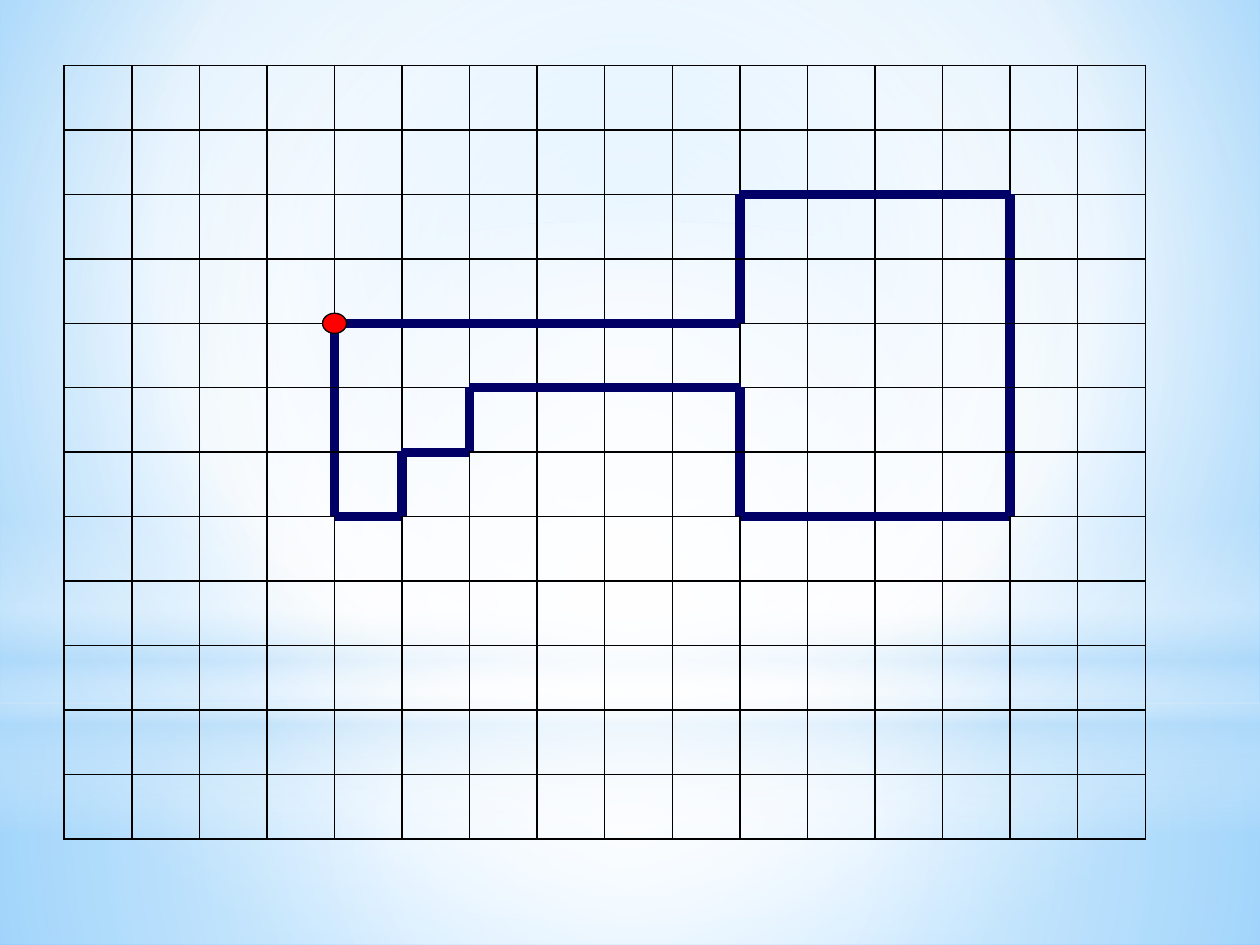
from itertools import pairwise, product
from lxml.etree import SubElement
from pptx import Presentation
from pptx.dml.color import RGBColor
from pptx.enum.shapes import MSO_SHAPE
from pptx.oxml.ns import qn
from pptx.util import Inches, Pt

THEME = {
    "font": "Calibri", "size": 18,
    "grid": ("000000", 1), "outline": ("000066", 6),
    "dot": "FF0000", "dot_line": ("000000", 0.75),
    "sky": [(0, "9ED5FF", 100), (60, "FFFFFF", 100), (100, "5BB9FF", 100)],
    "floor": [(0, "FFFFFF", 91), (37, "FFFFFF", 76), (100, "B4DCFA", 79)],
    "wall": [(0, "FFFFFF", 89), (48, "FFFFFF", 62), (100, "B4DCFA", 79)],
    "horizon": [(0, "FFFFFF", 0), (29, "FFFFFF", 30), (45, "B4DCFA", 40),
                (55, "FFFFFF", 26), (65, "B4DCFA", 60), (100, "FFFFFF", 0)],
    "glow": [(0, "FFFFFF", 100), (56, "FFFFFF", 0)],
}
W, H = 10, 7.5
COLS, ROWS = 16, 12
LEFT, TOP, GRID_W, GRID_H = 0.51, 0.52, 8.58, 6.14
DOT_W, DOT_H = 0.19, 0.16
CENTER = (50, 50, 50, 50)
BACKDROP = [
    ("floor", MSO_SHAPE.RECTANGLE, 5.58, 1.92, CENTER),
    ("wall", MSO_SHAPE.RECTANGLE, 0, 5.58, CENTER),
    ("horizon", MSO_SHAPE.RECTANGLE, 4.12, 2.5, None),
    ("glow", MSO_SHAPE.OVAL, 1.75, 5.58, CENTER),
]
KEY = [(4, 4), (10, 4), (10, 2), (14, 2), (14, 7), (10, 7), (10, 5),
       (6, 5), (6, 6), (5, 6), (5, 7), (4, 7), (4, 4)]


def add(parent, tag, **attrs):
    return SubElement(parent, qn(tag), {k: str(v) for k, v in attrs.items()})


def gradient(owner, fill, stops, focus):
    fill.solid()
    solid = owner.element.find(".//" + qn("a:solidFill"))
    grad = add(solid.getparent(), "a:gradFill", rotWithShape=1)
    solid.getparent().replace(solid, grad)
    gs_list = add(grad, "a:gsLst")
    for pos, color, alpha in stops:
        gs = add(gs_list, "a:gs", pos=pos * 1000)
        add(add(gs, "a:srgbClr", val=color), "a:alpha", val=alpha * 1000)
    if focus:
        sides = {k: v * 1000 for k, v in zip("ltrb", focus)}
        add(add(grad, "a:path", path="circle"), "a:fillToRect", **sides)
    else:
        add(grad, "a:lin", ang=5400000, scaled=0)


def add_shape(s, kind, x, y, w, h):
    sp = s.shapes.add_shape(kind, Inches(x), Inches(y), Inches(w), Inches(h))
    sp.shadow.inherit = False
    return sp


def outline_edges(points):
    edges = set()
    for (x1, y1), (x2, y2) in pairwise(points):
        if y1 == y2:
            edges |= {("h", x, y1) for x in range(min(x1, x2), max(x1, x2))}
        else:
            edges |= {("v", x1, y) for y in range(min(y1, y2), max(y1, y2))}
    return edges


def style_cell(cell, col, row, edges):
    r = cell.text_frame.paragraphs[0]
    r.font.name, r.font.size = THEME["font"], Pt(THEME["size"])
    tc_pr = cell._tc.get_or_add_tcPr()
    sides = {"a:lnL": ("v", col, row), "a:lnR": ("v", col + 1, row),
             "a:lnT": ("h", col, row), "a:lnB": ("h", col, row + 1)}
    for tag, edge in sides.items():
        color, width = THEME["outline" if edge in edges else "grid"]
        ln = add(tc_pr, tag, w=Pt(width), cap="flat", cmpd="sng")
        add(add(ln, "a:solidFill"), "a:srgbClr", val=color)
        add(ln, "a:prstDash", val="solid")
    cell.fill.background()


def add_grid(s):
    table = s.shapes.add_table(ROWS, COLS, Inches(LEFT), Inches(TOP),
                               Inches(GRID_W), Inches(GRID_H)).table
    table.first_row = table.horz_banding = False
    for column in table.columns:
        column.width = Inches(GRID_W / COLS)
    for row in table.rows:
        row.height = Inches(GRID_H / ROWS)
    edges = outline_edges(KEY)
    for row, col in product(range(ROWS), range(COLS)):
        style_cell(table.cell(row, col), col, row, edges)


def add_start(s):
    col, row = KEY[0]
    x = LEFT + col * GRID_W / COLS - DOT_W / 2
    y = TOP + row * GRID_H / ROWS - DOT_H / 2
    sp = add_shape(s, MSO_SHAPE.OVAL, x, y, DOT_W, DOT_H)
    color, width = THEME["dot_line"]
    sp.fill.solid()
    sp.fill.fore_color.rgb = RGBColor.from_string(THEME["dot"])
    sp.line.color.rgb = RGBColor.from_string(color)
    sp.line.width = Pt(width)


def main():
    prs = Presentation()
    prs.slide_width, prs.slide_height = Inches(W), Inches(H)
    s = prs.slides.add_slide(prs.slide_layouts[6])
    gradient(s, s.background.fill, THEME["sky"], (20, 10, 20, 60))
    for name, kind, y, h, focus in BACKDROP:
        sp = add_shape(s, kind, 0, y, W, h)
        sp.line.fill.background()
        gradient(sp, sp.fill, THEME[name], focus)
    add_grid(s)
    add_start(s)
    prs.save("out.pptx")


if __name__ == "__main__":
    main()
